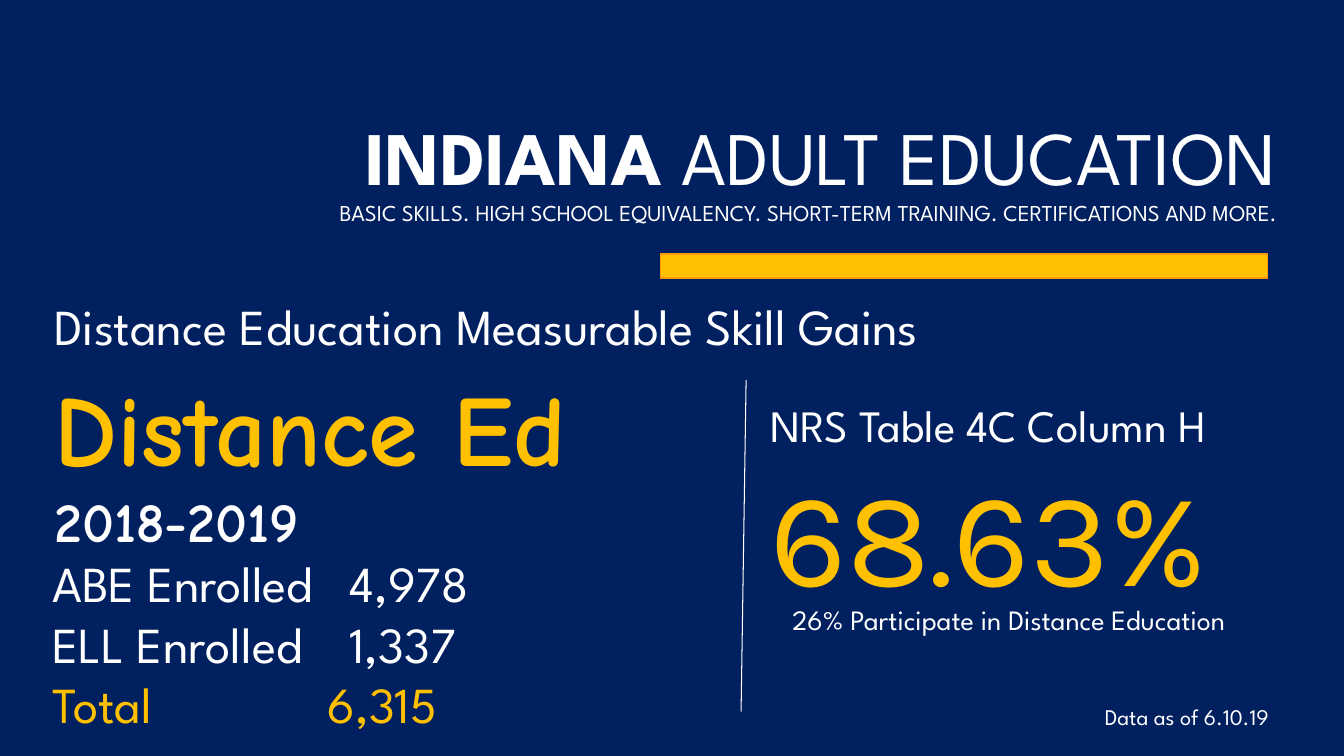
from dataclasses import dataclass

from lxml import etree
from pptx import Presentation
from pptx.dml.color import RGBColor
from pptx.enum.shapes import MSO_CONNECTOR, MSO_SHAPE
from pptx.enum.text import MSO_ANCHOR, PP_ALIGN
from pptx.oxml.ns import qn
from pptx.slide import Slide
from pptx.util import Inches, Pt

RECTANGLE = MSO_SHAPE.RECTANGLE
STRAIGHT = MSO_CONNECTOR.STRAIGHT
MIDDLE = MSO_ANCHOR.MIDDLE
RIGHT = PP_ALIGN.RIGHT

NAVY = "002060"
WHITE = "FFFFFF"
GOLD = "FFC000"
ORANGE = "FF9900"
SPARTAN = "League Spartan"
COMIC = "Comic Neue"
KARLA = "Karla"


@dataclass(frozen=True)
class Line:
    text: str
    size: float
    color: str = WHITE
    font: str = SPARTAN
    bold: bool = False
    tab: float = 0


@dataclass(frozen=True)
class TextBlock:
    left: float
    top: float
    width: float
    height: float
    lines: tuple[Line, ...]


BLOCKS = (
    TextBlock(0.44, 2.88, 11.59, 0.71, (
        Line("Distance Education Measurable Skill Gains", 36),)),
    TextBlock(0.44, 3.58, 6.71, 1.99, (
        Line("Distance Ed", 72, GOLD, COMIC, True),
        Line("2018-2019", 40, WHITE, COMIC, True))),
    TextBlock(10.86, 6.93, 2.14, 0.37, (Line("Data as of 6.10.19", 16),)),
    TextBlock(0.42, 5.43, 6.57, 1.92, (
        Line("ABE Enrolled\t4,978", 36, tab=2.95),
        Line("ELL Enrolled\t1,337", 36, tab=2.95),
        Line("Total\t6,315", 36, GOLD, tab=2.73))),
    TextBlock(7.54, 3.9, 5.65, 2.1, (
        Line("NRS Table 4C Column H", 32),
        Line("68.63%", 96, GOLD, KARLA))),
    TextBlock(7.76, 5.93, 5.57, 0.44, (
        Line("26% Participate in Distance Education", 20),)),
)


def rgb(value: str) -> RGBColor:
    return RGBColor.from_string(value)


def add_tab_stop(paragraph, position: float) -> None:
    properties = paragraph._p.get_or_add_pPr()
    tab_list = etree.SubElement(properties, qn("a:tabLst"))
    etree.SubElement(tab_list, qn("a:tab"), pos=str(Inches(position)), algn="l")


def add_text_block(slide: Slide, block: TextBlock) -> None:
    shape = slide.shapes.add_textbox(
        Inches(block.left), Inches(block.top),
        Inches(block.width), Inches(block.height))
    frame = shape.text_frame
    frame.word_wrap = True
    for index, line in enumerate(block.lines):
        paragraph = frame.add_paragraph() if index else frame.paragraphs[0]
        paragraph.text = line.text
        paragraph.font.size = Pt(line.size)
        paragraph.font.name = line.font
        paragraph.font.bold = line.bold
        paragraph.font.color.rgb = rgb(line.color)
        if line.tab:
            add_tab_stop(paragraph, line.tab)


def add_title(slide: Slide) -> None:
    shape = slide.shapes.add_textbox(
        Inches(1.77), Inches(1.11), Inches(10.99), Inches(1.41))
    frame = shape.text_frame
    frame.word_wrap = True
    frame.vertical_anchor = MIDDLE
    frame.margin_bottom = Inches(0.24)
    paragraph = frame.paragraphs[0]
    paragraph.alignment = RIGHT
    paragraph.line_spacing = 0.9
    paragraph.font.name = SPARTAN
    paragraph.font.color.rgb = rgb(WHITE)
    name = paragraph.add_run()
    name.text = "INDIANA"
    name.font.bold = True
    program = paragraph.add_run()
    program.text = " ADULT EDUCATION"
    paragraph.add_line_break()
    tagline = paragraph.add_run()
    tagline.text = ("BASIC SKILLS. HIGH SCHOOL EQUIVALENCY. "
                    "SHORT-TERM TRAINING. CERTIFICATIONS AND MORE.")
    for run, size in ((name, 54), (program, 54), (tagline, 16.2)):
        run.font.size = Pt(size)


def add_accent_bar(slide: Slide) -> None:
    shape = slide.shapes.add_shape(
        RECTANGLE, Inches(6.55), Inches(2.52), Inches(6.02), Inches(0.24))
    shape.shadow.inherit = False
    shape.fill.solid()
    shape.fill.fore_color.rgb = rgb(GOLD)
    shape.line.color.rgb = rgb(ORANGE)
    shape.line.width = Pt(1)


def add_divider(slide: Slide) -> None:
    connector = slide.shapes.add_connector(
        STRAIGHT, Inches(7.4), Inches(3.77), Inches(7.35), Inches(7.06))
    connector.line.color.rgb = rgb(WHITE)
    connector.line.width = Pt(0.75)
    etree.SubElement(connector._element.spPr, qn("a:effectLst"))


def main() -> None:
    presentation = Presentation()
    presentation.slide_width = Inches(13.33)
    presentation.slide_height = Inches(7.5)
    slide = presentation.slides.add_slide(presentation.slide_layouts[6])
    slide.background.fill.solid()
    slide.background.fill.fore_color.rgb = rgb(NAVY)
    add_title(slide)
    add_accent_bar(slide)
    for block in BLOCKS:
        add_text_block(slide, block)
    add_divider(slide)
    presentation.save("out.pptx")


if __name__ == "__main__":
    main()
